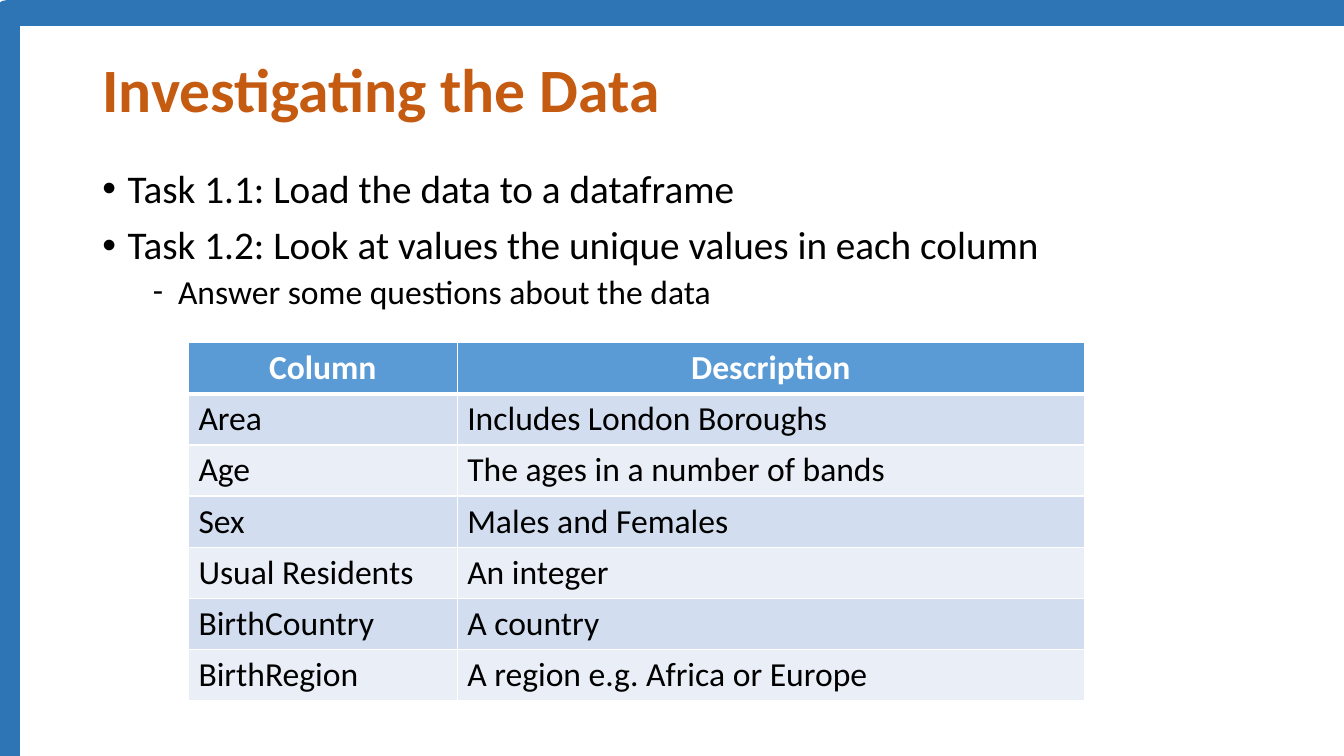
"""Build the "Investigating the Data" slide."""
from dataclasses import dataclass

from pptx import Presentation
from pptx.dml.color import RGBColor as Rgb
from pptx.enum.shapes import MSO_SHAPE as Shape
from pptx.enum.text import MSO_ANCHOR as Anchor, MSO_AUTO_SIZE as AutoSize, PP_ALIGN as Align
from pptx.oxml.ns import qn
from pptx.util import Pt
from lxml.etree import SubElement


@dataclass(frozen=True)
class Theme:
    """Colours, font and type sizes of the slide."""
    font: str = "Calibri"
    frame: str = "2E75B6"
    title: str = "C55A11"
    text: str = "000000"
    white: str = "FFFFFF"
    header: str = "5B9BD5"
    bands: tuple = ("D2DEEF", "EAEFF7")
    title_size: int = 44
    list_sizes: tuple = (28, 24)
    table_size: int = 24


BULLETS = ("•", "-")
INDENTS = (18, 54)
SPACES_BEFORE = (10, 5)

TASKS = [
    (0, "Task 1.1: Load the data to a dataframe"),
    (0, "Task 1.2: Look at values the unique values in each column"),
    (1, "Answer some questions about the data"),
]

COLUMNS = [
    ("Column", "Description"),
    ("Area", "Includes London Boroughs"),
    ("Age", "The ages in a number of bands"),
    ("Sex", "Males and Females"),
    ("Usual Residents", "An integer"),
    ("BirthCountry", "A country"),
    ("BirthRegion", "A region e.g. Africa or Europe"),
]


class SlideBuilder:
    """Draws styled elements on one slide, with lengths in points."""

    def __init__(self, page, theme):
        """Keep the slide and its theme."""
        self.page = page
        self.theme = theme

    def add_span(self, para, text, size, color, bold=False):
        """Add one styled run to a paragraph."""
        span = para.add_run()
        span.text = text
        font = span.font
        font.name, font.size, font.bold = self.theme.font, Pt(size), bold
        font.color.rgb = Rgb.from_string(color)

    def place(self, box, left, top, width, height):
        """Move and size a shape."""
        box.left, box.top, box.width, box.height = map(Pt, (left, top, width, height))

    def frame(self, left, top, width, height, weight):
        """Draw the unfilled border around the page."""
        box = self.page.shapes.add_shape(Shape.RECTANGLE, *map(Pt, (left, top, width, height)))
        box.shadow.inherit = False
        box.fill.background()
        box.line.color.rgb = Rgb.from_string(self.theme.frame)
        box.line.width = Pt(weight)

    def title(self, text, *bounds):
        """Fill the title placeholder."""
        box = self.page.shapes.title
        self.place(box, *bounds)
        box.text_frame.vertical_anchor = Anchor.MIDDLE
        box.text_frame.auto_size = AutoSize.NONE
        para = box.text_frame.paragraphs[0]
        para.alignment, para.line_spacing = Align.LEFT, 0.9
        self.add_span(para, text, self.theme.title_size, self.theme.title, True)

    def bullets(self, items, *bounds):
        """Fill the body placeholder with a two-level list."""
        box = self.page.placeholders[1]
        self.place(box, *bounds)
        frame = box.text_frame
        frame.auto_size = AutoSize.NONE
        for index, (level, text) in enumerate(items):
            para = frame.add_paragraph() if index else frame.paragraphs[0]
            para.level, para.line_spacing = level, 0.9
            para.space_before, para.space_after = Pt(SPACES_BEFORE[level]), Pt(0)
            props = para._p.get_or_add_pPr()
            props.set("marL", str(Pt(INDENTS[level])))
            props.set("indent", str(Pt(-18)))
            SubElement(props, qn("a:buFont"), typeface="Arial" if level == 0 else self.theme.font)
            SubElement(props, qn("a:buChar"), char=BULLETS[level])
            self.add_span(para, text, self.theme.list_sizes[level], self.theme.text)

    def border(self, cell, side, weight):
        """Add a white border to one side of a cell."""
        line = SubElement(cell._tc.get_or_add_tcPr(), qn(f"a:ln{side}"), w=str(Pt(weight)))
        fill = SubElement(line, qn("a:solidFill"))
        SubElement(fill, qn("a:srgbClr"), val=self.theme.white)

    def table(self, rows, left, top, widths, row_height):
        """Draw a banded table with a header row."""
        bounds = map(Pt, (left, top, sum(widths), row_height * len(rows)))
        grid = self.page.shapes.add_table(len(rows), len(widths), *bounds).table
        for column, width in zip(grid.columns, widths):
            column.width = Pt(width)
        for row_index, row in enumerate(rows):
            grid.rows[row_index].height = Pt(row_height)
            for column_index, text in enumerate(row):
                self.cell(grid.cell(row_index, column_index), text, row_index)

    def cell(self, cell, text, row_index):
        """Style and fill one table cell."""
        theme, is_header = self.theme, row_index == 0
        for side in "LRTB":
            thick = (side == "B" and is_header) or (side == "T" and row_index == 1)
            self.border(cell, side, 3 if thick else 1)
        cell.fill.solid()
        fill = theme.header if is_header else theme.bands[(row_index - 1) % 2]
        cell.fill.fore_color.rgb = Rgb.from_string(fill)
        para = cell.text_frame.paragraphs[0]
        para.alignment = Align.CENTER if is_header else Align.LEFT
        color = theme.white if is_header else theme.text
        self.add_span(para, text, theme.table_size, color, is_header)


def main():
    """Build and save the deck."""
    deck = Presentation()
    deck.slide_width, deck.slide_height = Pt(960), Pt(540)
    page = deck.slides.add_slide(deck.slide_layouts[1])
    builder = SlideBuilder(page, Theme())
    builder.frame(5, 9.3, 964, 543.6, 18)
    builder.title("Investigating the Data", 66, 28.8, 828, 74.9)
    builder.bullets(TASKS, 66, 117.4, 828, 130.3)
    builder.table(COLUMNS, 134.6, 244.8, (192, 448), 36)
    deck.save("out.pptx")


if __name__ == "__main__":
    main()
